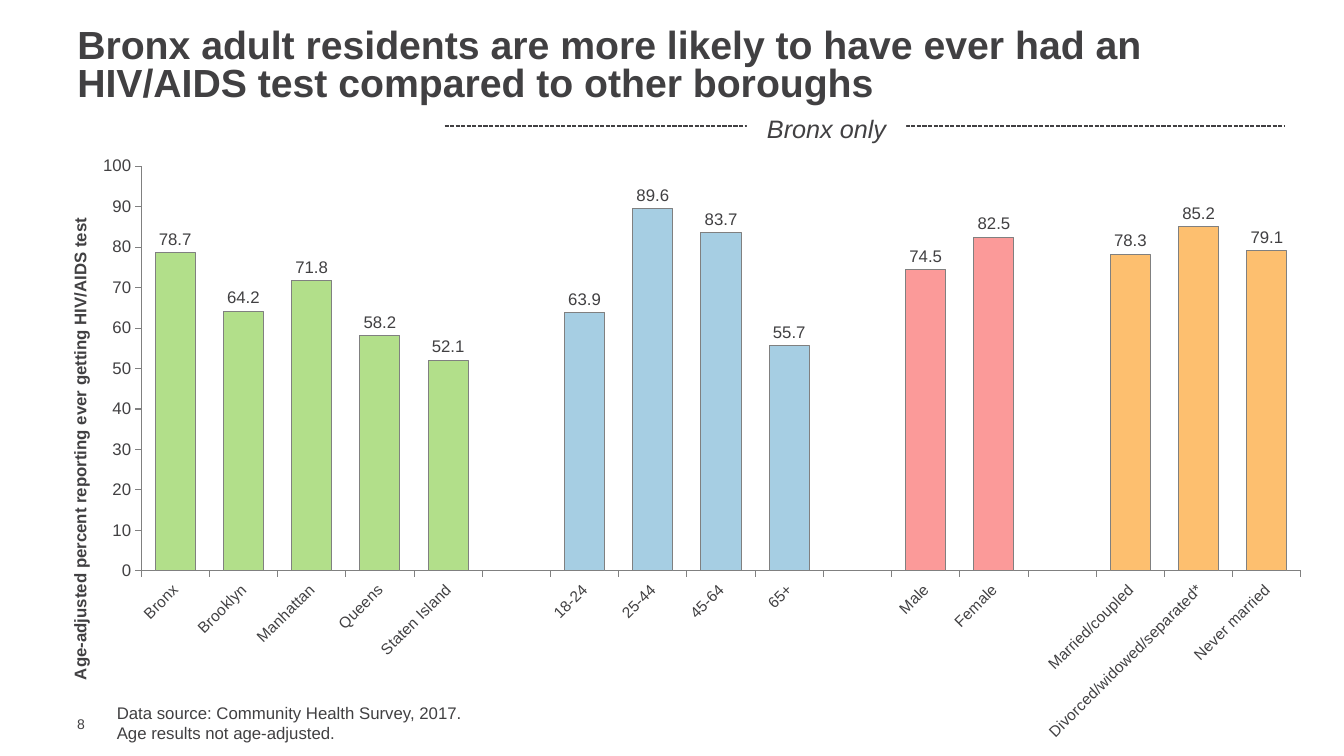
import pptx
import pptx.chart.data
import pptx.dml.color
import pptx.enum.chart
import pptx.enum.dml
import pptx.enum.shapes
import pptx.enum.text
import pptx.oxml
import pptx.oxml.ns
import pptx.util

RGBColor = pptx.dml.color.RGBColor
TEXT = RGBColor(0x41, 0x40, 0x42)
WHITE = RGBColor(0xFF, 0xFF, 0xFF)
GREY = RGBColor(0x80, 0x80, 0x80)
GREEN = RGBColor(0xB2, 0xDF, 0x8A)
BLUE = RGBColor(0xA6, 0xCE, 0xE3)
PINK = RGBColor(0xFB, 0x9A, 0x99)
ORANGE = RGBColor(0xFD, 0xBF, 0x6F)
FONT = "Arial"

# Grid of 40 columns by 30 rows
WIDTH = pptx.util.Inches(13.33)
HEIGHT = pptx.util.Inches(7.5)
COLUMNS, ROWS = 40, 30

# Bar groups: colour, then category and percent
GROUPS = [
    (GREEN, [("Bronx", 78.7), ("Brooklyn", 64.2), ("Manhattan", 71.8),
             ("Queens", 58.2), ("Staten Island", 52.1)]),
    (BLUE, [("18-24", 63.9), ("25-44", 89.6), ("45-64", 83.7), ("65+", 55.7)]),
    (PINK, [("Male", 74.5), ("Female", 82.5)]),
    (ORANGE, [("Married/coupled", 78.3), ("Divorced/widowed/separated*", 85.2),
              ("Never married", 79.1)]),
]


def grid(left, top, width, height):
    """Turn columns and rows into slide lengths."""
    return (int(WIDTH * left / COLUMNS), int(HEIGHT * top / ROWS),
            int(WIDTH * width / COLUMNS), int(HEIGHT * height / ROWS))


def style_font(font, size, bold=False, italic=False):
    font.name = FONT
    font.size = pptx.util.Pt(size)
    font.bold = bold
    font.italic = italic
    font.color.rgb = TEXT


def write_lines(frame, lines, size, align=pptx.enum.text.PP_ALIGN.LEFT, **style):
    frame.word_wrap = True
    for index, line in enumerate(lines):
        paragraph = frame.add_paragraph() if index else frame.paragraphs[0]
        paragraph.alignment = align
        run = paragraph.add_run()
        run.text = line
        style_font(run.font, size, **style)


def set_title(slide, text):
    title = slide.shapes.title
    title.left, title.top, title.width, title.height = grid(2, 0.96, 36, 3.4)
    frame = title.text_frame
    frame.auto_size = pptx.enum.text.MSO_AUTO_SIZE.NONE
    frame.vertical_anchor = pptx.enum.text.MSO_ANCHOR.MIDDLE
    write_lines(frame, [text], 28, bold=True)
    frame.paragraphs[0].line_spacing = 0.8


def add_text(slide, area, lines, size):
    box = slide.shapes.add_textbox(*grid(*area))
    write_lines(box.text_frame, lines, size)
    return box


def add_dashed_rule(slide, start, end, row):
    left, top, width, _ = grid(start, row, end - start, 0)
    rule = slide.shapes.add_connector(
        pptx.enum.shapes.MSO_CONNECTOR.STRAIGHT, left, top, left + width, top)
    rule.line.color.rgb = TEXT
    rule.line.width = pptx.util.Pt(1)
    rule.line.dash_style = pptx.enum.dml.MSO_LINE.SQUARE_DOT
    properties = rule._element.spPr
    properties.append(pptx.oxml.parse_xml(
        f'<a:effectLst {pptx.oxml.ns.nsdecls("a")}/>'))


def add_rule_label(slide, area, text):
    label = slide.shapes.add_shape(
        pptx.enum.shapes.MSO_SHAPE.RECTANGLE, *grid(*area))
    label.shadow.inherit = False
    label.fill.solid()
    label.fill.fore_color.rgb = WHITE
    label.line.fill.background()
    label.text_frame.vertical_anchor = pptx.enum.text.MSO_ANCHOR.TOP
    write_lines(label.text_frame, [text], 18,
                align=pptx.enum.text.PP_ALIGN.CENTER, italic=True)


def spread_groups():
    """List the bars in order, with an empty slot between groups."""
    bars = []
    for color, members in GROUPS:
        if bars:
            bars.append(("", None, None))
        bars.extend((name, value, color) for name, value in members)
    return bars


def set_plot_area(chart, x, y, w, h):
    plot_area = chart._chartSpace.chart.plotArea
    for layout in plot_area.findall(pptx.oxml.ns.qn("c:layout")):
        plot_area.remove(layout)
    modes = '<c:xMode val="edge"/><c:yMode val="edge"/>'
    sizes = "".join(f'<c:{key} val="{share}"/>' for key, share in
                    (("x", x), ("y", y), ("w", w), ("h", h)))
    plot_area.insert(0, pptx.oxml.parse_xml(
        f'<c:layout {pptx.oxml.ns.nsdecls("c")}><c:manualLayout>'
        f'<c:layoutTarget val="inner"/>{modes}{sizes}'
        '</c:manualLayout></c:layout>'))


def style_axes(chart, title):
    for axis, size in ((chart.category_axis, 11), (chart.value_axis, 12)):
        axis.has_major_gridlines = False
        axis.major_tick_mark = pptx.enum.chart.XL_TICK_MARK.OUTSIDE
        axis.minor_tick_mark = pptx.enum.chart.XL_TICK_MARK.NONE
        axis.format.line.color.rgb = GREY
        axis.format.line.width = pptx.util.Pt(0.75)
        style_font(axis.tick_labels.font, size)
    # Slanted category names
    chart.category_axis._element.txPr.bodyPr.set("rot", "-2700000")
    value_axis = chart.value_axis
    value_axis.minimum_scale, value_axis.maximum_scale = 0, 100
    value_axis.major_unit = 10
    value_axis.tick_labels.number_format = "0"
    value_axis.tick_labels.number_format_is_linked = False
    write_lines(value_axis.axis_title.text_frame, [title], 12,
                align=pptx.enum.text.PP_ALIGN.CENTER, bold=True)
    value_axis.axis_title.text_frame._txBody.bodyPr.set("rot", "-5400000")


def add_bar_chart(slide, area, axis_title):
    bars = spread_groups()
    data = pptx.chart.data.CategoryChartData()
    data.categories = [name for name, _, _ in bars]
    data.add_series("Series 1", [value for _, value, _ in bars])
    chart = slide.shapes.add_chart(
        pptx.enum.chart.XL_CHART_TYPE.COLUMN_CLUSTERED, *grid(*area), data).chart
    chart.has_legend = False
    chart.has_title = False
    style_font(chart.font, 12)
    style_axes(chart, axis_title)
    set_plot_area(chart, 0.06, 0.027, 0.933, 0.678)

    plot = chart.plots[0]
    plot.gap_width = 70
    plot.vary_by_categories = False
    series = plot.series[0]
    bar_formats = [(series.format, GREEN)]
    bar_formats += [(series.points[index].format, color)
                    for index, (_, _, color) in enumerate(bars) if color]
    for bar_format, color in bar_formats:
        bar_format.fill.solid()
        bar_format.fill.fore_color.rgb = color
        bar_format.line.color.rgb = GREY
        bar_format.line.width = pptx.util.Pt(0.75)

    labels = series.data_labels
    labels.show_value = True
    labels.number_format = "#,##0.0"
    labels.number_format_is_linked = False
    labels.position = pptx.enum.chart.XL_LABEL_POSITION.OUTSIDE_END
    style_font(labels.font, 12)


def main():
    presentation = pptx.Presentation()
    presentation.slide_width, presentation.slide_height = WIDTH, HEIGHT
    slide = presentation.slides.add_slide(presentation.slide_layouts[5])

    # Slide number and title
    number = add_text(slide, (2, 28.4, 1.29, 0.68), ["8"], 10).text_frame
    number.margin_top = number.margin_bottom = number.margin_right = 0
    number.vertical_anchor = pptx.enum.text.MSO_ANCHOR.MIDDLE
    set_title(slide, "Bronx adult residents are more likely to have ever had an "
                     "HIV/AIDS test compared to other boroughs")

    # Chart and its source note
    add_bar_chart(slide, (1.98, 5.96, 37, 23.68),
                  "Age-adjusted percent reporting ever getting HIV/AIDS test")
    add_text(slide, (3.18, 27.68, 29.76, 2),
             ["Data source: Community Health Survey, 2017.",
              "Age results not age-adjusted."], 12)

    # Rule over the Bronx groups
    add_dashed_rule(slide, 13.23, 38.25, 5)
    add_rule_label(slide, (22.23, 4.32, 4.74, 1.6), "Bronx only")

    presentation.save("out.pptx")


if __name__ == "__main__":
    main()
